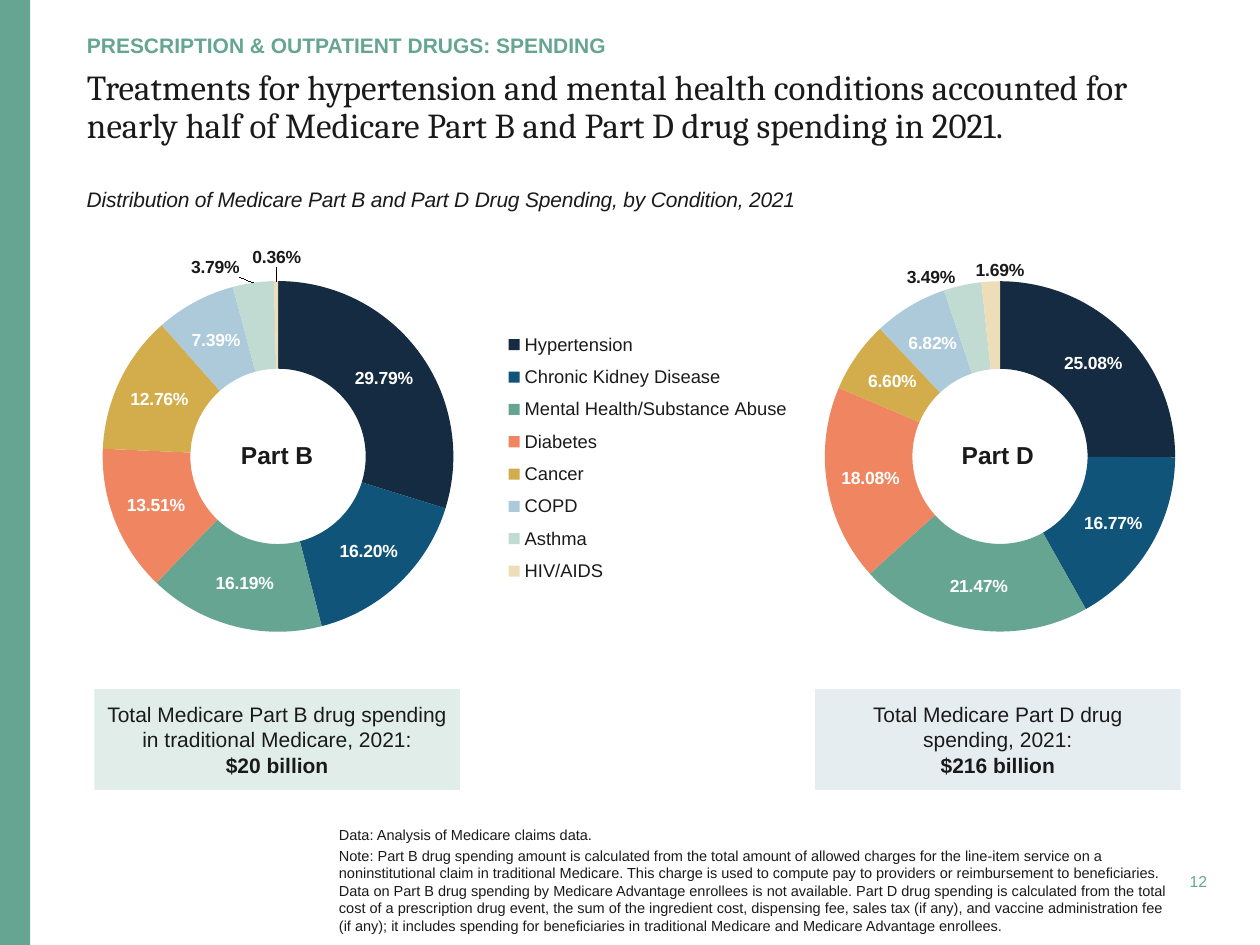
import pptx
import pptx.util
import pptx.dml.color
import pptx.enum.text
import pptx.enum.shapes
import pptx.enum.chart
import pptx.chart.data
import pptx.oxml
import pptx.oxml.ns
from lxml import etree

Inches = pptx.util.Inches
Pt = pptx.util.Pt
qn = pptx.oxml.ns.qn
ALIGN = pptx.enum.text.PP_ALIGN
ANCHOR = pptx.enum.text.MSO_ANCHOR
color = pptx.dml.color.RGBColor.from_string
INK = "1A1A1A"
GREEN = "65A591"


def write(frame, lines, size, hue=INK, font="Arial", bold=None, align=ALIGN.LEFT,
          anchor=ANCHOR.TOP, inset=0, wrap=True):
    frame.word_wrap = wrap
    frame.vertical_anchor = anchor
    frame.margin_left = frame.margin_right = Inches(inset)
    frame.margin_top = frame.margin_bottom = Inches(inset / 2)
    frame.text = "\n".join(lines)
    for para in frame.paragraphs:
        para.alignment = align
        for span in para.runs:
            span.font.size = Pt(size)
            span.font.name = font
            span.font.bold = bold
            span.font.color.rgb = color(hue)
    return frame.paragraphs


def set_layout(parent, index, **settings):
    for old in parent.findall(qn("c:layout")):
        parent.remove(old)
    layout = etree.Element(qn("c:layout"))
    manual = etree.SubElement(layout, qn("c:manualLayout"))
    for name, value in settings.items():
        etree.SubElement(manual, qn("c:" + name)).set("val", str(value))
    parent.insert(index, layout)


deck = pptx.Presentation()
deck.slide_width = Inches(10)
deck.slide_height = Inches(7.5)
page = deck.slides.add_slide(deck.slide_layouts[6])
shapes = page.shapes
RECTANGLE = pptx.enum.shapes.MSO_SHAPE.RECTANGLE

side_bar = shapes.add_shape(RECTANGLE, 0, 0, Inches(0.24), Inches(7.5))
side_bar.shadow.inherit = False
side_bar.fill.solid()
side_bar.fill.fore_color.rgb = color(GREEN)
side_bar.line.fill.background()

number = shapes.add_textbox(Inches(9.27), Inches(6.88), Inches(0.31), Inches(0.22))
write(number.text_frame, ["12"], 9, GREEN, align=ALIGN.RIGHT, anchor=ANCHOR.MIDDLE, wrap=False)

notes = shapes.add_textbox(Inches(2.69), Inches(6.56), Inches(6.59), Inches(0.85))
paras = write(notes.text_frame, [
    "Data: Analysis of Medicare claims data.",
    "Note: Part B drug spending amount is calculated from the total amount of allowed charges "
    "for the line-item service on a noninstitutional claim in traditional Medicare. This charge "
    "is used to compute pay to providers or reimbursement to beneficiaries. Data on Part B drug "
    "spending by Medicare Advantage enrollees is not available. Part D drug spending is calculated "
    "from the total cost of a prescription drug event, the sum of the ingredient cost, dispensing "
    "fee, sales tax (if any), and vaccine administration fee (if any); it includes spending for "
    "beneficiaries in traditional Medicare and Medicare Advantage enrollees.",
], 8.3, anchor=ANCHOR.MIDDLE)
paras[1].space_before = Pt(1.7)

title = shapes.add_textbox(Inches(0.69), Inches(0.56), Inches(8.85), Inches(0.8))
paras = write(title.text_frame, [
    "Treatments for hypertension and mental health conditions accounted for nearly half of "
    "Medicare Part B and Part D drug spending in 2021."], 20, font="Cambria")
paras[0].line_spacing = 0.9

section = shapes.add_textbox(Inches(0.69), Inches(0.19), Inches(8.66), Inches(0.27))
write(section.text_frame, ["PRESCRIPTION & OUTPATIENT DRUGS: SPENDING"], 12, GREEN,
      bold=True, anchor=ANCHOR.BOTTOM)

subtitle = shapes.add_textbox(Inches(0.59), Inches(1.43), Inches(8.4), Inches(0.27))
paras = write(subtitle.text_frame, [
    "Distribution of Medicare Part B and Part D Drug Spending, by Condition, 2021"], 12, inset=0.1)
span = paras[0].runs[0]
span.font.italic = True
span.font._element.set("spc", "-10")

conditions = ["Hypertension", "Chronic Kidney Disease", "Mental Health/Substance Abuse",
              "Diabetes", "Cancer", "COPD", "Asthma", "HIV/AIDS"]
slice_colors = ["142B41", "115479", GREEN, "F08661", "D3AC4C", "ACCADA", "C1DBD3", "EDDEB7"]
parts = [
    {"name": "Part B", "left": 0.61, "width": 5.85, "categories": conditions,
     "shares": [0.2979, 0.162, 0.1619, 0.1351, 0.1276, 0.0739, 0.0379, 0.0036],
     "offsets": {6: (-0.06, -0.14), 7: (0, -0.16)},
     "label": (1.52, 1.36), "box_left": 0.75, "fill": "E0EDE9", "alpha": 100,
     "total": "Total Medicare Part B drug spending in traditional Medicare, 2021:\v$20 billion"},
    {"name": "Part D", "left": 6.46, "width": 5.41, "categories": list("12345678"),
     "shares": [0.2508, 0.1677, 0.2147, 0.1808, 0.066, 0.0682, 0.0349, 0.0169],
     "offsets": {6: (-0.06, -0.12), 7: (0.01, -0.13)},
     "label": (7.12, 1.6), "box_left": 6.47, "fill": "115479", "alpha": 10,
     "total": "Total Medicare Part D drug spending, 2021:\v$216 billion"},
]

for part in parts:
    data = pptx.chart.data.CategoryChartData(number_format="0.00%")
    data.categories = part["categories"]
    data.add_series("Series 1", part["shares"])
    chart = shapes.add_chart(
        pptx.enum.chart.XL_CHART_TYPE.DOUGHNUT, Inches(part["left"]), Inches(1.96),
        Inches(part["width"]), Inches(3.35), data).chart
    chart.has_title = False
    chart.font.size = Pt(10)
    chart.font.name = "Arial"
    chart.font.color.rgb = color(INK)
    chart.plots[0].vary_by_categories = True
    plot_area = chart.element.find(".//" + qn("c:plotArea"))
    plot_area.find(".//" + qn("c:holeSize")).set("val", "60")
    set_layout(plot_area, 0, layoutTarget="inner", xMode="edge", yMode="edge",
               x=0.016, y=0.081, w=0.514, h=0.831)

    series = chart.plots[0].series[0]
    for index, hue in enumerate(slice_colors):
        point = series.points[index]
        point.format.fill.solid()
        point.format.fill.fore_color.rgb = color(hue)

    labels = series.data_labels
    labels.show_value = True
    labels.number_format = "0.00%"
    labels.number_format_is_linked = False
    fonts = [(labels.font, "FFFFFF")]
    fonts += [(series.points[index].data_label.font, INK) for index in part["offsets"]]
    for font, hue in fonts:
        font.size = Pt(10)
        font.name = "Arial"
        font.bold = True
        font.color.rgb = color(hue)
    for label, (x, y) in zip(plot_area.iter(qn("c:dLbl")), part["offsets"].values()):
        set_layout(label, 1, x=x, y=y)

    chart.has_legend = part["categories"] is conditions
    if chart.has_legend:
        legend = chart.legend
        legend.position = pptx.enum.chart.XL_LEGEND_POSITION.RIGHT
        legend.include_in_layout = False
        legend.font.size = Pt(10.5)
        legend.font.name = "Arial"
        legend.font.color.rgb = color(INK)
        set_layout(chart.element.find(".//" + qn("c:legend")), 1, xMode="edge", yMode="edge",
                   x=0.57, y=0.18, w=0.41, h=0.64)

    left, width = part["label"]
    name = shapes.add_textbox(Inches(left), Inches(3.44), Inches(width), Inches(0.34))
    write(name.text_frame, [part["name"]], 14, bold=True, align=ALIGN.CENTER,
          anchor=ANCHOR.MIDDLE, inset=0.1)

    box = shapes.add_shape(RECTANGLE, Inches(part["box_left"]), Inches(5.47),
                           Inches(2.9), Inches(0.8))
    box.shadow.inherit = False
    box.fill.solid()
    box.fill.fore_color.rgb = color(part["fill"])
    box.line.fill.background()
    if part["alpha"] < 100:
        tint = box.fill._xPr.find(".//" + qn("a:srgbClr"))
        etree.SubElement(tint, qn("a:alpha")).set("val", str(part["alpha"] * 1000))
    paras = write(box.text_frame, [part["total"]], 12, align=ALIGN.CENTER,
                  anchor=ANCHOR.MIDDLE, inset=0.1)
    paras[0].space_after = Pt(6)
    paras[0].runs[-1].font.bold = True

deck.save("out.pptx")
